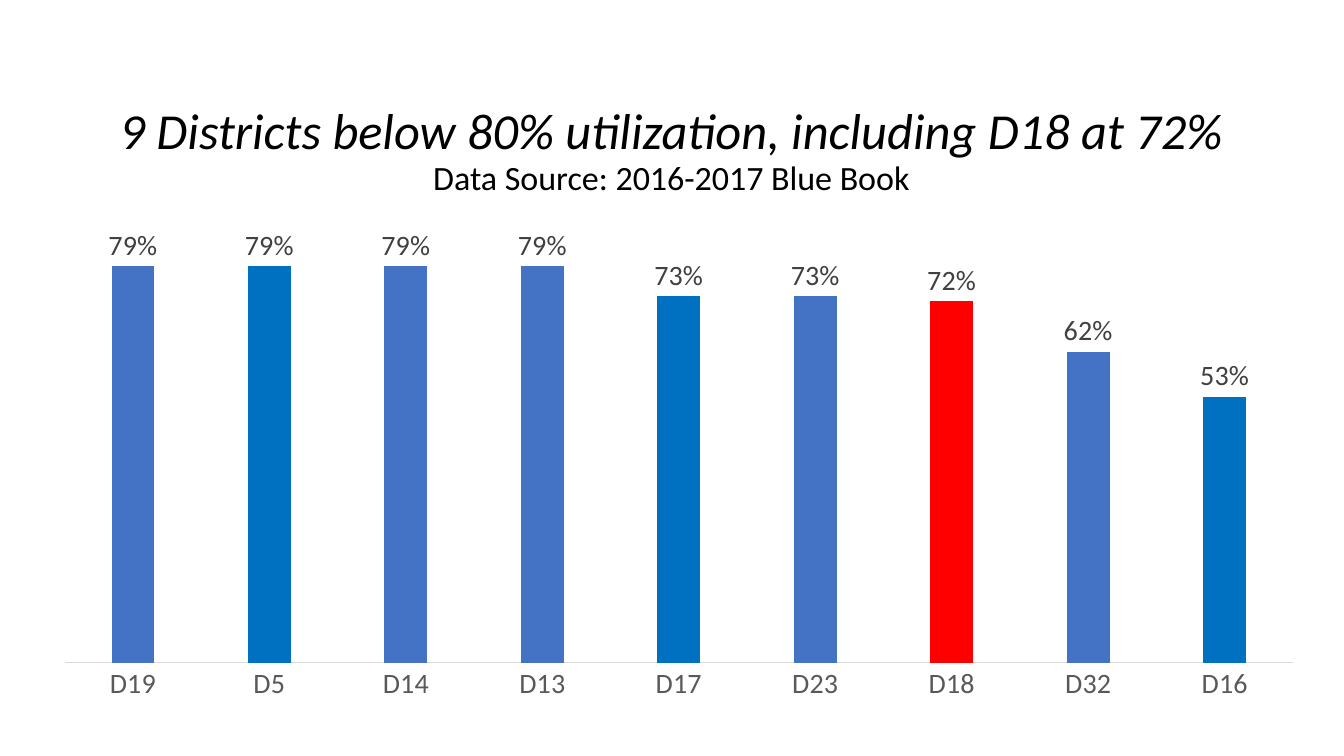
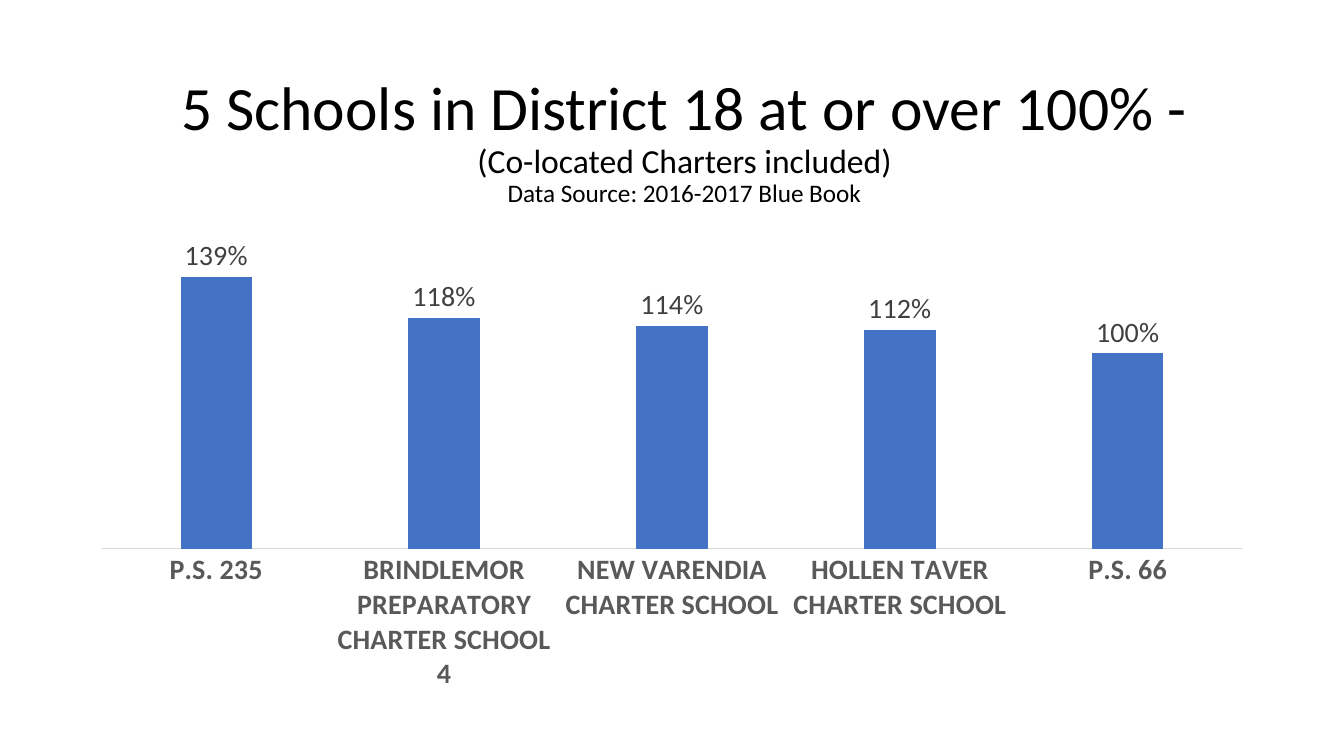
from pptx import Presentation, util as u
from pptx.chart.data import CategoryChartData
from pptx.dml.color import RGBColor
from pptx.enum import chart as ch, text
from pptx.oxml import parse_xml
from pptx.oxml.ns import nsdecls

# Shared style
FONT = "Calibri"
BLACK = RGBColor(0x00, 0x00, 0x00)
AXIS_TEXT = RGBColor(0x59, 0x59, 0x59)
LABEL_TEXT = RGBColor(0x40, 0x40, 0x40)
AXIS_LINE = RGBColor(0xD9, 0xD9, 0xD9)
BAR = RGBColor(0x44, 0x72, 0xC4)
BAR_ALT = RGBColor(0x00, 0x70, 0xC0)
BAR_FOCUS = RGBColor(0xFF, 0x00, 0x00)
WIDTH, HEIGHT = u.Inches(13.33), u.Inches(7.5)
CHART_TEXT_SIZE = 20
SOURCE = "Data Source: 2016-2017 Blue Book"


def box(left, top, width, height):
    """Turn percentages of the slide into left, top, width, height."""
    return [round(share * side / 100) for share, side in
            ((left, WIDTH), (top, HEIGHT), (width, WIDTH), (height, HEIGHT))]


def set_all(obj, values):
    for name, value in values.items():
        setattr(obj, name, value)


def set_font(font, size, color, **extra):
    set_all(font, {"name": FONT, "size": u.Pt(size), **extra})
    font.color.rgb = color


def add_title(s, area, lines, anchor):
    """Fill the title; each line is (text, size, italic)."""
    sp = s.shapes.title
    set_all(sp, dict(zip(("left", "top", "width", "height"), box(*area))))
    tf = sp.text_frame
    set_all(tf, {"word_wrap": True, "auto_size": text.MSO_AUTO_SIZE.NONE,
                 "vertical_anchor": anchor, "margin_bottom": 0, "margin_top": 0})
    for i, (line, size, italic) in enumerate(lines):
        p = tf.add_paragraph() if i else tf.paragraphs[0]
        set_all(p, {"alignment": text.PP_ALIGN.CENTER, "line_spacing": 0.9,
                    "space_before": u.Pt(0)})
        r = p.add_run()
        r.text = line
        set_font(r.font, size, BLACK, italic=italic)


def set_plot_area(chart, x, y, w, h):
    """Fix the inner plot area, in shares of the chart."""
    plot_area = chart.plots[0]._element.getparent()
    for old in plot_area.findall("{*}layout"):
        plot_area.remove(old)
    sizes = "".join(f'<c:{tag} val="{value}"/>' for tag, value in
                    zip("xywh", (x, y, w, h)))
    plot_area.insert(0, parse_xml(
        f'<c:layout {nsdecls("c")}><c:manualLayout><c:layoutTarget val="inner"/>'
        f'<c:xMode val="edge"/><c:yMode val="edge"/>{sizes}'
        '</c:manualLayout></c:layout>'))


def add_bars(s, area, values, top_value, bold=False, point_colors=None):
    """Add a column chart of percentages and return it."""
    data = CategoryChartData(number_format="0%")
    data.categories = [name for name, _ in values]
    data.add_series("Series 1", [value for _, value in values])
    chart = s.shapes.add_chart(ch.XL_CHART_TYPE.COLUMN_CLUSTERED,
                               *box(*area), data).chart
    set_all(chart, {"has_legend": False, "has_title": False})
    set_font(chart.font, 10, BLACK)

    # Axes
    set_all(chart.value_axis, {"visible": False, "has_major_gridlines": False,
                               "minimum_scale": 0, "maximum_scale": top_value})
    axis = chart.category_axis
    axis.major_tick_mark = ch.XL_TICK_MARK.NONE
    axis.format.line.color.rgb = AXIS_LINE
    axis.format.line.width = u.Pt(0.75)
    set_font(axis.tick_labels.font, CHART_TEXT_SIZE, AXIS_TEXT, bold=bold)

    # Bars and labels
    plot = chart.plots[0]
    set_all(plot, {"gap_width": 219, "overlap": -27, "vary_by_categories": False})
    series = plot.series[0]
    fills = [(series, BAR)]
    fills += [(series.points[i], c) for i, c in (point_colors or {}).items()]
    for part, color in fills:
        part.format.fill.solid()
        part.format.fill.fore_color.rgb = color
    labels = series.data_labels
    set_all(labels, {"show_value": True, "number_format": "0%",
                     "number_format_is_linked": False,
                     "position": ch.XL_LABEL_POSITION.OUTSIDE_END})
    set_font(labels.font, CHART_TEXT_SIZE, LABEL_TEXT)
    return chart


def add_districts(s):
    add_title(s, (0.75, 6.8, 98.42, 19.33), [
        ("9 Districts below 80% utilization, including D18 at 72%", 36, True),
        (SOURCE, 24.3, False),
    ], text.MSO_ANCHOR.BOTTOM)
    chart = add_bars(s, (2.93, 26.53, 94.22, 70.27), [
        ("D19", 0.79), ("D5", 0.79), ("D14", 0.79), ("D13", 0.79), ("D17", 0.73),
        ("D23", 0.73), ("D18", 0.72), ("D32", 0.62), ("D16", 0.53),
    ], 0.9, point_colors={1: BAR_ALT, 4: BAR_ALT, 6: BAR_FOCUS, 8: BAR_ALT})
    set_plot_area(chart, 0.02, 0.02, 0.97, 0.85)


def add_schools(s):
    add_title(s, (7.8, 9.2, 86.27, 19.33), [
        ("5 Schools in District 18 at or over 100% -", 44, False),
        ("(Co-located Charters included)", 24, False),
        (SOURCE, 18, False),
    ], text.MSO_ANCHOR.MIDDLE)
    add_bars(s, (5.85, 30, 88.3, 62.67), [
        ("P.S. 235", 1.39),
        ("BRINDLEMOR PREPARATORY CHARTER SCHOOL 4", 1.18),
        ("NEW VARENDIA CHARTER SCHOOL", 1.14),
        ("HOLLEN TAVER CHARTER SCHOOL", 1.12),
        ("P.S. 66", 1),
    ], 1.6, bold=True)


def main():
    prs = Presentation()
    set_all(prs, {"slide_width": WIDTH, "slide_height": HEIGHT})
    title_only = prs.slide_layouts[5]
    for build in (add_districts, add_schools):
        build(prs.slides.add_slide(title_only))
    prs.save("out.pptx")


if __name__ == "__main__":
    main()
